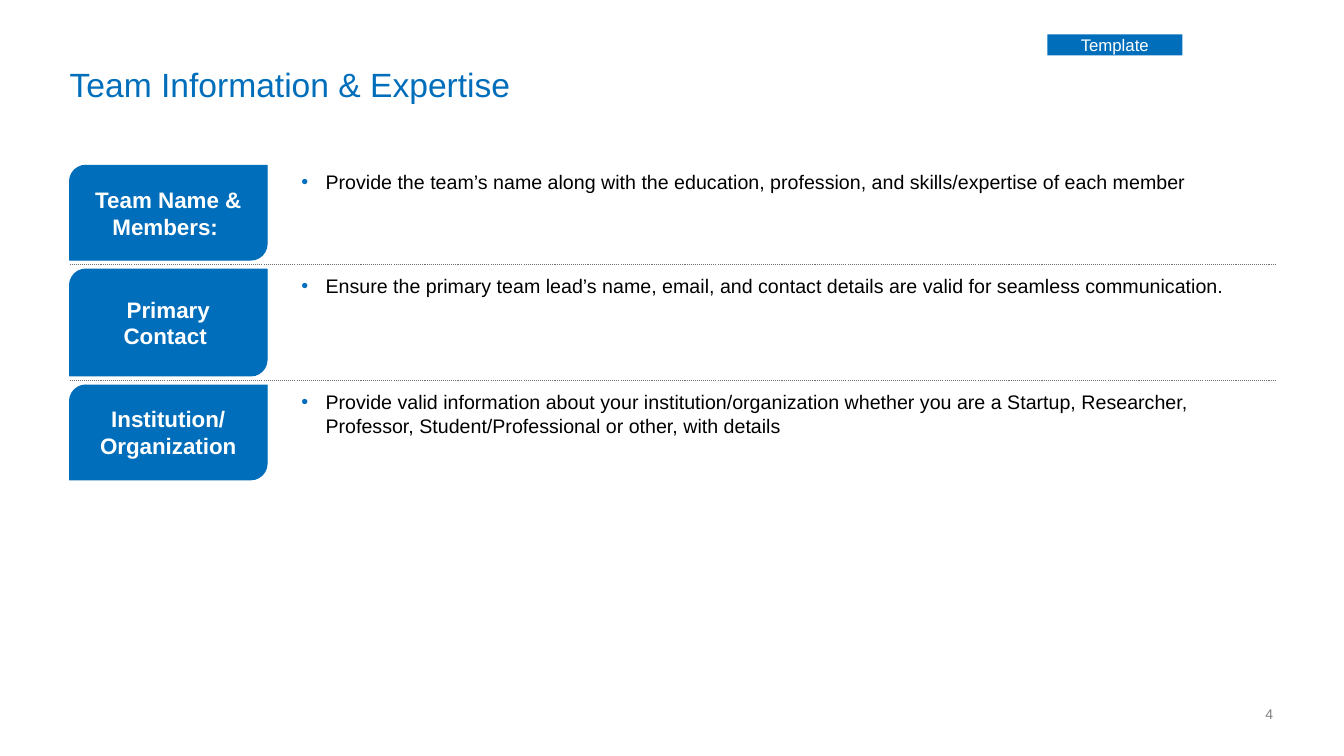
from dataclasses import dataclass

import lxml.etree
import pptx
import pptx.dml.color
import pptx.enum.dml
import pptx.enum.shapes
import pptx.enum.text
import pptx.oxml.ns
import pptx.util

Align = pptx.enum.text.PP_ALIGN
Anchor = pptx.enum.text.MSO_ANCHOR
Shape = pptx.enum.shapes.MSO_SHAPE


@dataclass(frozen=True)
class Theme:
    font: str = "Arial"
    blue: str = "006EBA"
    rule: str = "6E6F73"
    gray: str = "808080"
    black: str = "000000"
    white: str = "FFFFFF"
    title_size: int = 24
    label_size: int = 16
    body_size: int = 14
    tag_size: int = 12
    number_size: int = 10
    line_width: float = 0.75


# Grid of square cells, ten to the inch
COLUMNS, ROWS = 133.33, 75
LEFT, RIGHT = 6.9, 126.5
LABEL_WIDTH = 19.6
BODY_LEFT = 27.8
FIRST_ROW, ROW_GAP = 16.4, 0.9
CORNER = 1.61

TEAM_ROWS = [
    (9.4, "Team Name & Members: ",
     "Provide the team’s name along with the education, profession, "
     "and skills/expertise of each member"),
    (10.6, "Primary\vContact ",
     "Ensure the primary team lead’s name, email, and contact details "
     "are valid for seamless communication."),
    (9.4, "Institution/ Organization",
     "Provide valid information about your institution/organization whether "
     "you are a Startup, Researcher, Professor, Student/Professional or other, "
     "with details"),
]


def cells(count):
    return pptx.util.Inches(count / 10)


def color(value):
    return pptx.dml.color.RGBColor.from_string(value)


def add_xml(parent, tag, **attributes):
    element = lxml.etree.SubElement(parent, pptx.oxml.ns.qn(tag))
    for name, value in attributes.items():
        element.set(name, str(value))
    return element


class SlideBuilder:
    def __init__(self, presentation, theme):
        self.theme = theme
        # The Comparison layout offers a title and four body placeholders
        self.slide = presentation.slides.add_slide(presentation.slide_layouts[4])
        self.bodies = list(self.slide.placeholders)[1:]

    def place(self, shape, left, top, width, height):
        shape.left, shape.top = cells(left), cells(top)
        shape.width, shape.height = cells(width), cells(height)

    def set_text(self, shape, text, size, ink, align=Align.LEFT, anchor=Anchor.TOP,
                 inset=True, bold=False):
        """Fill the shape with one styled paragraph and return it."""
        frame = shape.text_frame
        frame.word_wrap = True
        frame.auto_size = pptx.enum.text.MSO_AUTO_SIZE.NONE
        frame.vertical_anchor = anchor
        frame.margin_left = frame.margin_right = cells(1 if inset else 0)
        frame.margin_top = frame.margin_bottom = cells(0.5 if inset else 0)
        paragraph = frame.paragraphs[0]
        paragraph.text = text
        paragraph.alignment = align
        paragraph.space_before = pptx.util.Pt(0)
        paragraph.font.name = self.theme.font
        paragraph.font.size = pptx.util.Pt(size)
        paragraph.font.bold = bold
        paragraph.font.color.rgb = color(ink)
        return paragraph

    def title(self, text, *box):
        shape = self.slide.shapes.title
        self.place(shape, *box)
        paragraph = self.set_text(shape, text, self.theme.title_size,
                                  self.theme.blue, inset=False)
        paragraph.line_spacing = 0.9

    def block(self, preset, *box):
        shape = self.slide.shapes.add_shape(preset, *map(cells, box))
        shape.shadow.inherit = False
        shape.fill.solid()
        shape.fill.fore_color.rgb = color(self.theme.blue)
        shape.line.fill.background()
        return shape

    def tag(self, text, *box):
        self.set_text(self.block(Shape.RECTANGLE, *box), text, self.theme.tag_size,
                      self.theme.white, Align.CENTER, Anchor.MIDDLE, inset=False)

    def label(self, text, *box):
        shape = self.block(Shape.ROUND_2_DIAG_RECTANGLE, *box)
        shape.adjustments[0] = CORNER / box[3]
        shape.adjustments[1] = 0
        shape.line.color.rgb = color(self.theme.blue)
        shape.line.width = pptx.util.Pt(self.theme.line_width)
        paragraph = self.set_text(shape, text, self.theme.label_size,
                                  self.theme.white, Align.CENTER, Anchor.MIDDLE,
                                  bold=True)
        paragraph.space_after = pptx.util.Pt(6)

    def bullet(self, text, *box):
        shape = self.bodies.pop(0)
        self.place(shape, *box)
        paragraph = shape.text_frame.paragraphs[0]
        paragraph.level = 1
        paragraph.space_before = pptx.util.Pt(0)
        paragraph.space_after = pptx.util.Pt(1)
        properties = paragraph._p.get_or_add_pPr()
        properties.set("marL", str(cells(3.5)))
        properties.set("indent", str(cells(-2.4)))
        bullet_color = add_xml(properties, "a:buClr")
        add_xml(bullet_color, "a:srgbClr", val=self.theme.blue)
        add_xml(properties, "a:buFont", typeface=self.theme.font)
        add_xml(properties, "a:buChar", char="•")
        self.set_text(shape, text, self.theme.body_size, self.theme.black)

    def divider(self, row):
        line = self.slide.shapes.add_connector(
            pptx.enum.shapes.MSO_CONNECTOR.STRAIGHT,
            cells(LEFT), cells(row), cells(RIGHT), cells(row))
        line.line.color.rgb = color(self.theme.rule)
        line.line.width = pptx.util.Pt(self.theme.line_width)
        line.line.dash_style = pptx.enum.dml.MSO_LINE.ROUND_DOT
        add_xml(line._element.spPr, "a:effectLst")

    def page_number(self, text, *box):
        shape = self.slide.shapes.add_textbox(*map(cells, box))
        self.set_text(shape, text, self.theme.number_size, self.theme.gray,
                      Align.RIGHT, Anchor.BOTTOM, inset=False)

    def remove_empty_bodies(self):
        for shape in self.bodies:
            shape._element.getparent().remove(shape._element)
        self.bodies = []


def main():
    presentation = pptx.Presentation()
    presentation.slide_width, presentation.slide_height = cells(COLUMNS), cells(ROWS)
    builder = SlideBuilder(presentation, Theme())

    builder.title("Team Information & Expertise", LEFT, 6.8, RIGHT - LEFT, 3.6)
    top = FIRST_ROW
    for index, (height, label, description) in enumerate(TEAM_ROWS):
        if index:
            builder.divider(top - ROW_GAP / 2)
        builder.label(label, LEFT, top, LABEL_WIDTH, height)
        builder.bullet(description, BODY_LEFT, top, RIGHT - BODY_LEFT, height)
        top += height + ROW_GAP
    builder.tag("Template", 103.9, 3.4, 13.4, 2.1)
    builder.page_number("4", 122.1, 70, 4.2, 1.7)
    builder.remove_empty_bodies()

    presentation.save("out.pptx")


if __name__ == "__main__":
    main()
